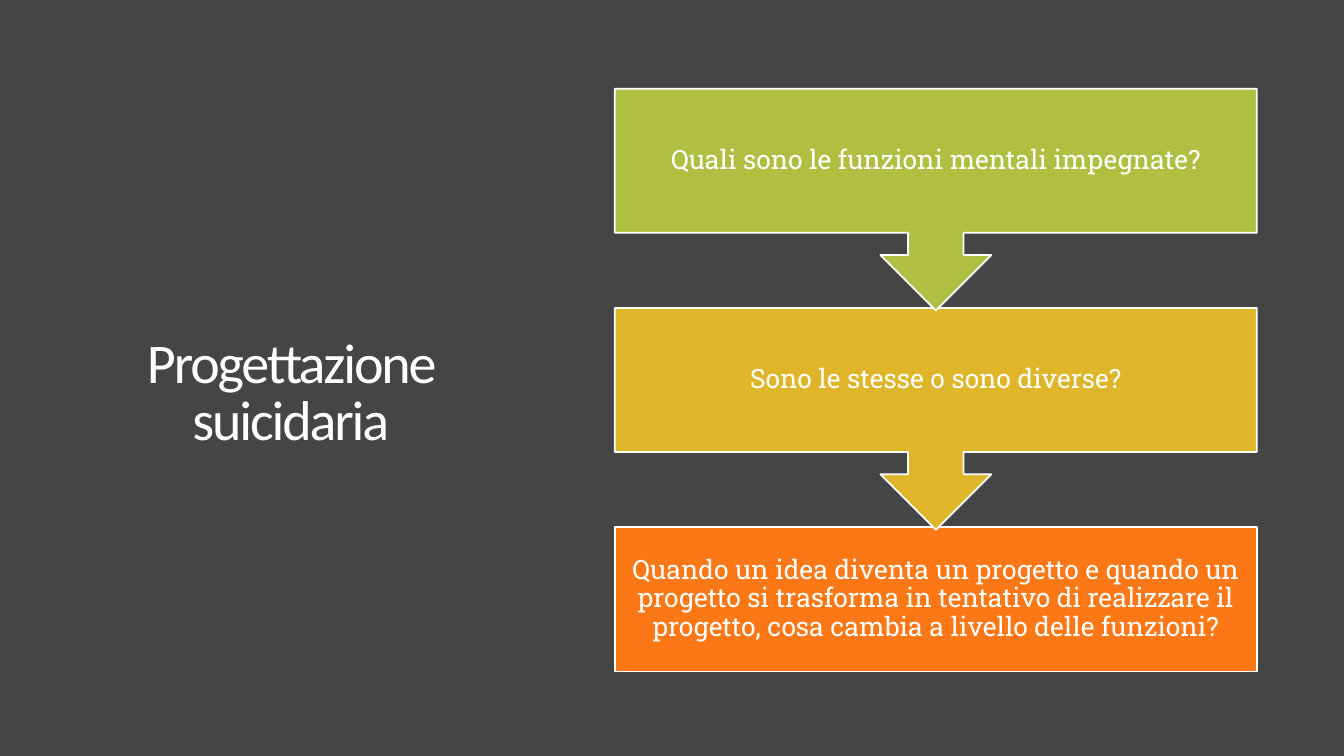
from pptx import Presentation
from pptx.dml.color import RGBColor
from pptx.enum.shapes import MSO_SHAPE as SHAPE
from pptx.enum.text import MSO_ANCHOR as ANCHOR, PP_ALIGN as ALIGN
from pptx.util import Pt

COLORS = {
    "background": "454545",
    "white": "FFFFFF",
    "green": "AFBF41",
    "yellow": "DFB62A",
    "orange": "FC7715",
}


def rgb(name):
    return RGBColor.from_string(COLORS[name])


def format_text(sp, text, font, size, spacing, inset):
    tf = sp.text_frame
    tf.word_wrap = True
    tf.vertical_anchor = ANCHOR.MIDDLE
    tf.margin_left = tf.margin_right = Pt(inset)
    tf.margin_top = tf.margin_bottom = Pt(inset)
    p = tf.paragraphs[0]
    p.alignment = ALIGN.CENTER
    p.line_spacing = spacing
    r = p.add_run()
    r.text = text
    p.font.name = font
    p.font.size = Pt(size)
    p.font.color.rgb = rgb("white")
    return r


prs = Presentation()
prs.slide_width, prs.slide_height = Pt(960), Pt(540)
s = prs.slides.add_slide(prs.slide_layouts[5])
s.background.fill.solid()
s.background.fill.fore_color.rgb = rgb("background")

# Title, with tightened letter spacing
title = s.shapes.title
title.left, title.top = Pt(69.8), Pt(185)
title.width, title.height = Pt(275.8), Pt(193.7)
r = format_text(title, "Progettazione suicidaria", "Calibri", 40, 0.85, 18)
r.font._element.set("spc", "-150")

# Steps, drawn bottom up so that each arrow tip overlaps the box below
LEFT, TOP, WIDTH, STEP = 439.2, 63.4, 458.6, 156.6
BOX_HEIGHT, CALLOUT_HEIGHT = 103, 158.4
steps = [
    ("Quali sono le funzioni mentali impegnate?", "green",
     SHAPE.DOWN_ARROW_CALLOUT, CALLOUT_HEIGHT),
    ("Sono le stesse o sono diverse?", "yellow",
     SHAPE.DOWN_ARROW_CALLOUT, CALLOUT_HEIGHT),
    ("Quando un idea diventa un progetto e quando un progetto si trasforma "
     "in tentativo di realizzare il progetto, cosa cambia a livello delle "
     "funzioni?", "orange", SHAPE.RECTANGLE, BOX_HEIGHT),
]
for i, (text, color, kind, height) in reversed(list(enumerate(steps))):
    sp = s.shapes.add_shape(kind, Pt(LEFT), Pt(TOP + i * STEP),
                            Pt(WIDTH), Pt(height))
    sp.shadow.inherit = False
    sp.fill.solid()
    sp.fill.fore_color.rgb = rgb(color)
    sp.line.color.rgb = rgb("white")
    sp.line.width = Pt(1.25)
    format_text(sp, text, "Roboto Slab", 19, 0.9, 10.8)

prs.save("out.pptx")
